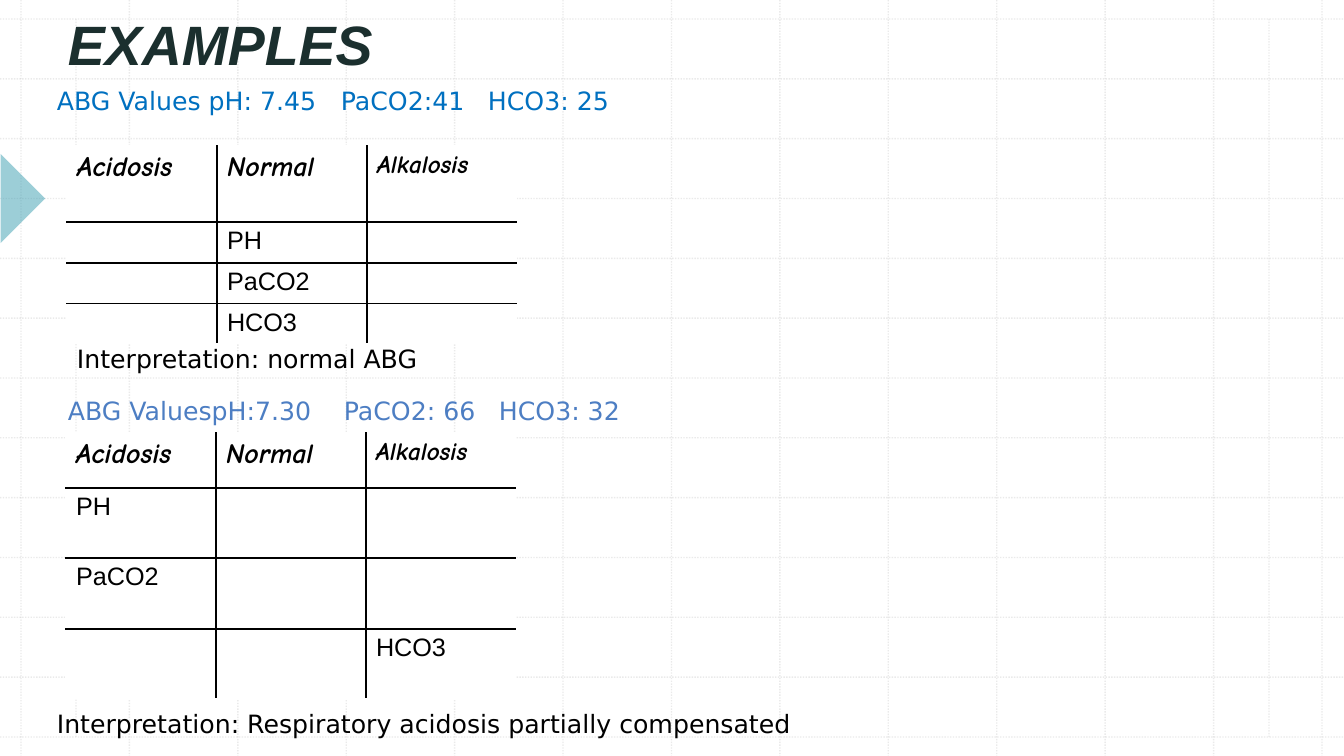
"""Build the slide of worked blood gas examples with two sorting tables."""
import dataclasses

import lxml.etree
import pptx
import pptx.dml.color
import pptx.enum.dml
import pptx.enum.shapes
import pptx.enum.text
import pptx.oxml.ns
import pptx.util


@dataclasses.dataclass(frozen=True)
class Theme:
    title: str = "1B2F2E"
    blue: str = "0070C0"
    soft_blue: str = "4D7EC3"
    ink: str = "000000"
    paper: str = "FFFFFF"
    grid: str = "BCBCBC"
    marker: str = "3B9EB1"
    heading_font: str = "Arial"
    body_font: str = "DejaVu Sans"
    header_font: str = "Comic Neue"
    title_size: float = 39.6
    header_size: int = 20
    body_size: int = 18


THEME = Theme()
SLIDE_WIDTH, SLIDE_HEIGHT = 1344, 756
EMU_PER_PX = 914400 / 100.8

GRID_LEFT, GRID_RIGHT, GRID_TOP, GRID_BOTTOM = 21, 1322, 19, 737
GRID_STEPS = 12
MARGIN_LINES = (76, 1269)
MARKER_BOX = (-31, 167, 63, 63)

TITLE = ("EXAMPLES", (58, 21, 1157, 59))
TEXTS = [
    (["ABG Values pH: 7.45", "PaCO2:41", "HCO3: 25"], (47, 80, 1142, 132), THEME.blue, (284, 431)),
    (["Interpretation: normal ABG"], (67, 338, 450, 40), THEME.ink, ()),
    (["ABG ValuespH:7.30", "PaCO2: 66", "HCO3: 32"], (58, 390, 674, 40), THEME.soft_blue, (276, 431)),
    (["Interpretation: Respiratory acidosis partially compensated"], (47, 703, 901, 40), THEME.ink, ()),
]

HEADERS = [
    ("Acidosis", THEME.header_size),
    ("Normal", THEME.header_size),
    ("Alkalosis", THEME.body_size),
]
COLUMN_WIDTH = 150
TABLES = [
    ((67, 146), (76, 41, 40, 40), [("", "PH", ""), ("", "PaCO2", ""), ("", "HCO3", "")]),
    ((66, 433), (55, 70, 71, 70), [("PH", "", ""), ("PaCO2", "", ""), ("", "", "HCO3")]),
]


def px(value):
    return pptx.util.Emu(round(value * EMU_PER_PX))


def rgb(color):
    return pptx.dml.color.RGBColor.from_string(color)


def add_child(parent, tag, **attributes):
    return lxml.etree.SubElement(parent, pptx.oxml.ns.qn(tag), attributes)


def set_opacity(shape, percent):
    for color in shape._element.spPr.iter(pptx.oxml.ns.qn("a:srgbClr")):
        add_child(color, "a:alpha", val=str(percent * 1000))


def add_run(paragraph, text, font_name, size, color, bold=False, italic=False):
    run = paragraph.add_run()
    run.text = text
    run.font.name = font_name
    run.font.size = pptx.util.Pt(size)
    run.font.color.rgb = rgb(color)
    run.font.bold = bold
    run.font.italic = italic


def add_grid_line(slide, *ends):
    connector = slide.shapes.add_connector(
        pptx.enum.shapes.MSO_CONNECTOR.STRAIGHT, *map(px, ends))
    connector.line.color.rgb = rgb(THEME.grid)
    connector.line.width = pptx.util.Pt(1)
    connector.line.dash_style = pptx.enum.dml.MSO_LINE.ROUND_DOT
    set_opacity(connector, 30)
    add_child(connector._element.spPr, "a:effectLst")


def add_background(slide):
    for step in range(GRID_STEPS + 1):
        x = GRID_LEFT + (GRID_RIGHT - GRID_LEFT) * step / GRID_STEPS
        y = GRID_TOP + (GRID_BOTTOM - GRID_TOP) * step / GRID_STEPS
        add_grid_line(slide, x, 0, x, SLIDE_HEIGHT)
        add_grid_line(slide, 0, y, SLIDE_WIDTH, y)
    for x in MARGIN_LINES:
        add_grid_line(slide, x, GRID_TOP, x, GRID_BOTTOM)
    marker = slide.shapes.add_shape(
        pptx.enum.shapes.MSO_SHAPE.RIGHT_TRIANGLE, *map(px, MARKER_BOX))
    marker.rotation = 225
    marker.shadow.inherit = False
    marker.fill.solid()
    marker.fill.fore_color.rgb = rgb(THEME.marker)
    marker.line.fill.background()
    set_opacity(marker, 50)


def add_text_frame(slide, box):
    text_frame = slide.shapes.add_textbox(*map(px, box)).text_frame
    text_frame.word_wrap = True
    return text_frame


def add_title(slide):
    text, box = TITLE
    text_frame = add_text_frame(slide, box)
    text_frame.vertical_anchor = pptx.enum.text.MSO_ANCHOR.BOTTOM
    text_frame.margin_bottom = px(3)
    add_run(text_frame.paragraphs[0], text, THEME.heading_font,
            THEME.title_size, THEME.title, bold=True, italic=True)


def add_body_text(slide, parts, box, color, stops):
    paragraph = add_text_frame(slide, box).paragraphs[0]
    if stops:
        tab_list = add_child(paragraph._p.get_or_add_pPr(), "a:tabLst")
        for stop in stops:
            add_child(tab_list, "a:tab", pos=str(px(stop)), algn="l")
    for index, part in enumerate(parts):
        text = f"\t{part}" if index else part
        add_run(paragraph, text, THEME.body_font, THEME.body_size, color)


def style_cell(cell, outer_sides):
    properties = cell._tc.get_or_add_tcPr()
    for side in ("L", "R", "T", "B"):
        border = add_child(properties, f"a:ln{side}", w=str(pptx.util.Pt(1)))
        color = THEME.paper if side in outer_sides else THEME.ink
        add_child(add_child(border, "a:solidFill"), "a:srgbClr", val=color)
    cell.fill.solid()
    cell.fill.fore_color.rgb = rgb(THEME.paper)


def add_sorting_table(slide, corner, heights, body):
    rows, columns = len(heights), len(HEADERS)
    size = (COLUMN_WIDTH * columns, sum(heights))
    table = slide.shapes.add_table(rows, columns, *map(px, corner + size)).table
    table.first_row = False
    table.horz_banding = False
    for column in table.columns:
        column.width = px(COLUMN_WIDTH)
    for row, height in enumerate(heights):
        table.rows[row].height = px(height)
        for column, (header, header_size) in enumerate(HEADERS):
            cell = table.cell(row, column)
            edges = {"L": column == 0, "R": column == columns - 1,
                     "T": row == 0, "B": row == rows - 1}
            style_cell(cell, [side for side, outer in edges.items() if outer])
            paragraph = cell.text_frame.paragraphs[0]
            if row == 0:
                add_run(paragraph, header, THEME.header_font, header_size,
                        THEME.ink, bold=True, italic=True)
            elif body[row - 1][column]:
                add_run(paragraph, body[row - 1][column], THEME.heading_font,
                        THEME.body_size, THEME.ink)


def main():
    presentation = pptx.Presentation()
    presentation.slide_width = px(SLIDE_WIDTH)
    presentation.slide_height = px(SLIDE_HEIGHT)
    slide = presentation.slides.add_slide(presentation.slide_layouts[6])
    add_background(slide)
    add_title(slide)
    for table in TABLES:
        add_sorting_table(slide, *table)
    for text in TEXTS:
        add_body_text(slide, *text)
    presentation.save("out.pptx")


if __name__ == "__main__":
    main()
